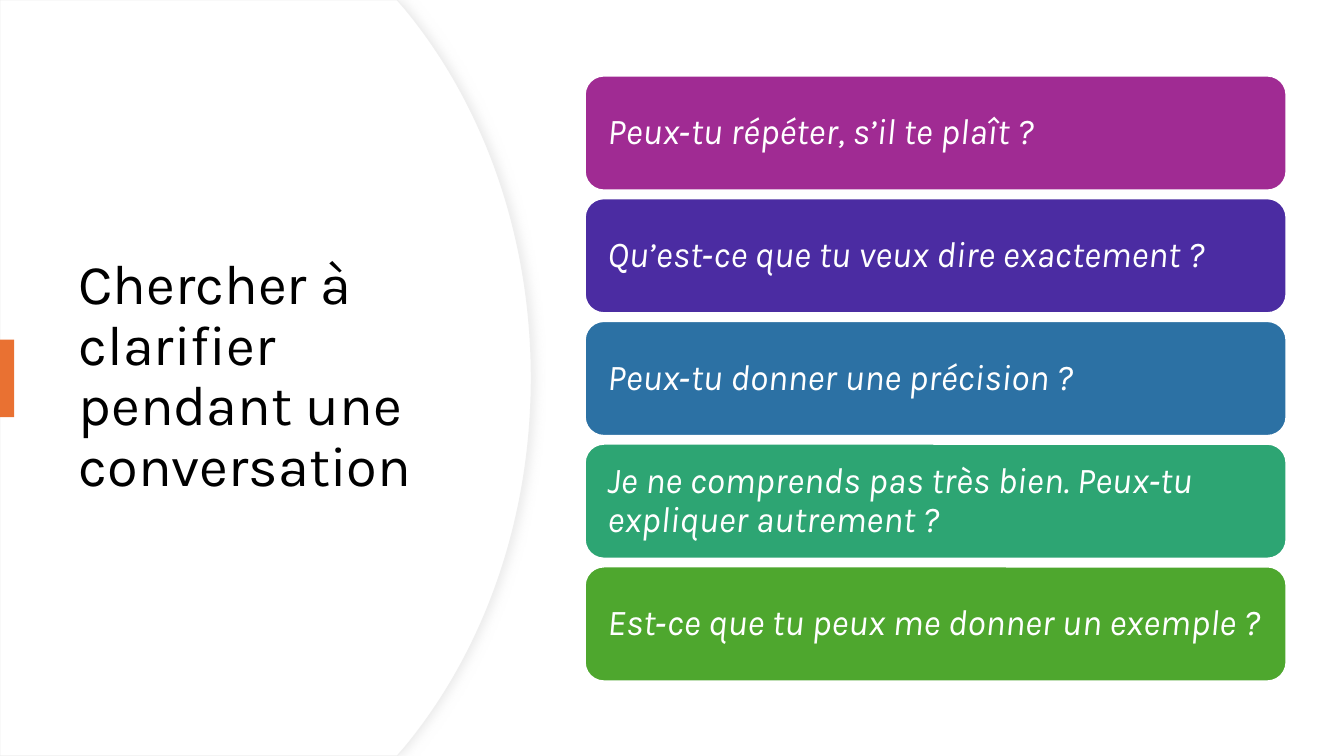
from lxml import etree
from pptx import Presentation
from pptx.dml.color import RGBColor
from pptx.enum.shapes import MSO_SHAPE
from pptx.enum.text import MSO_ANCHOR, PP_ALIGN
from pptx.oxml.ns import qn
from pptx.util import Inches, Pt

RECTANGLE = MSO_SHAPE.RECTANGLE
ROUNDED = MSO_SHAPE.ROUNDED_RECTANGLE
MIDDLE = MSO_ANCHOR.MIDDLE
LEFT = PP_ALIGN.LEFT

FONT = "Karla"
WHITE = RGBColor(0xFF, 0xFF, 0xFF)
BLACK = RGBColor(0x00, 0x00, 0x00)
EDGE = RGBColor(0xEF, 0xEF, 0xEF)
SHADOW = RGBColor(0xD9, 0xD9, 0xD9)
ORANGE = RGBColor(0xE9, 0x71, 0x32)
PURPLE = RGBColor(0xA0, 0x2B, 0x93)
INDIGO = RGBColor(0x4B, 0x2C, 0xA2)
BLUE = RGBColor(0x2C, 0x71, 0xA4)
TEAL = RGBColor(0x2D, 0xA5, 0x73)
GREEN = RGBColor(0x4E, 0xA7, 0x2E)

WIDTH, HEIGHT = 13.33, 7.5
CARD_LEFT, CARD_TOP = 5.8, 0.75
CARD_WIDTH, CARD_HEIGHT, CARD_PITCH = 6.96, 1.14, 1.2175
CURVE_STEPS = 48

PHRASES = [
    ("Peux‑tu répéter, s’il te plaît ?", PURPLE),
    ("Qu’est‑ce que tu veux dire exactement ?", INDIGO),
    ("Peux‑tu donner une précision ?", BLUE),
    ("Je ne comprends pas très bien. Peux‑tu expliquer autrement ?", TEAL),
    ("Est‑ce que tu peux me donner un exemple ?", GREEN),
]


def write_text(shape, text, size, color, inset, italic=False):
    """Put one left-aligned, vertically centred paragraph in a shape."""
    frame = shape.text_frame
    frame.text = text
    frame.word_wrap = True
    frame.vertical_anchor = MIDDLE
    frame.margin_left = frame.margin_right = Inches(inset)
    frame.margin_top = frame.margin_bottom = Inches(min(inset, 0.1))
    para = frame.paragraphs[0]
    para.alignment = LEFT
    para.line_spacing = 0.9
    font = para.runs[0].font
    font.name, font.size, font.italic = FONT, Pt(size), italic
    font.color.rgb = color


def add_block(slide, kind, left, top, width, height, color):
    """Add a filled preset shape without line or shadow."""
    block = slide.shapes.add_shape(
        kind, Inches(left), Inches(top), Inches(width), Inches(height))
    block.shadow.inherit = False
    block.fill.solid()
    block.fill.fore_color.rgb = color
    block.line.fill.background()
    return block


def curve_points():
    """Return the points of the panel's bulging right side, top to bottom."""
    upper = []
    for step in range(CURVE_STEPS + 1):
        t = step / CURVE_STEPS
        weights = ((1 - t) ** 3, 3 * t * (1 - t) ** 2, 3 * t * t * (1 - t), t ** 3)
        upper.append(tuple(
            sum(weight * value for weight, value in zip(weights, values))
            for values in ((4.01, 4.79, 5.27, 5.27), (0.08, 1.02, 2.32, 3.75))))
    lower = [(x, HEIGHT - y) for x, y in reversed(upper[:-1])]
    return [(3.94, 0)] + upper + lower + [(3.94, HEIGHT)]


def add_soft_shadow(shape):
    """Give a shape a blurred grey shadow to its right."""
    shape.shadow.inherit = False
    effects = shape._element.spPr.find(qn("a:effectLst"))
    outer = etree.SubElement(
        effects, qn("a:outerShdw"), blurRad=str(Pt(7)), dist=str(Pt(3)),
        dir="0", algn="l", rotWithShape="0")
    color = etree.SubElement(outer, qn("a:srgbClr"), val=str(SHADOW))
    etree.SubElement(color, qn("a:alpha"), val="50000")


def add_panel(slide):
    """Add the white curved panel behind the title."""
    points = [(Inches(x), Inches(y)) for x, y in curve_points()]
    builder = slide.shapes.build_freeform(0, 0)
    builder.add_line_segments(points + [(0, Inches(HEIGHT))], close=True)
    panel = builder.convert_to_shape()
    panel.fill.solid()
    panel.fill.fore_color.rgb = WHITE
    panel.line.color.rgb = EDGE
    panel.line.width = Pt(0.75)
    add_soft_shadow(panel)
    slide.shapes.title._element.addprevious(panel._element)


def add_title(slide, text):
    """Place and format the title placeholder."""
    title = slide.shapes.title
    title.left, title.top = Inches(0.68), Inches(1.27)
    title.width, title.height = Inches(3.94), Inches(4.95)
    write_text(title, text, 40, BLACK, 0.1)


def add_card(slide, row, text, color):
    """Add one phrase card in the given row of the stack."""
    card = add_block(slide, ROUNDED, CARD_LEFT, CARD_TOP + row * CARD_PITCH,
                     CARD_WIDTH, CARD_HEIGHT, color)
    card.line.color.rgb = WHITE
    card.line.width = Pt(1.5)
    write_text(card, text, 26, WHITE, 0.17, italic=True)


def main():
    """Build the slide and save the deck."""
    deck = Presentation()
    deck.slide_width, deck.slide_height = Inches(WIDTH), Inches(HEIGHT)
    slide = deck.slides.add_slide(deck.slide_layouts[5])
    add_panel(slide)
    add_title(slide, "Chercher à clarifier pendant une conversation")
    add_block(slide, RECTANGLE, 0, 3.37, 0.14, 0.77, ORANGE)
    for row, (text, color) in enumerate(PHRASES):
        add_card(slide, row, text, color)
    deck.save("out.pptx")


if __name__ == "__main__":
    main()
